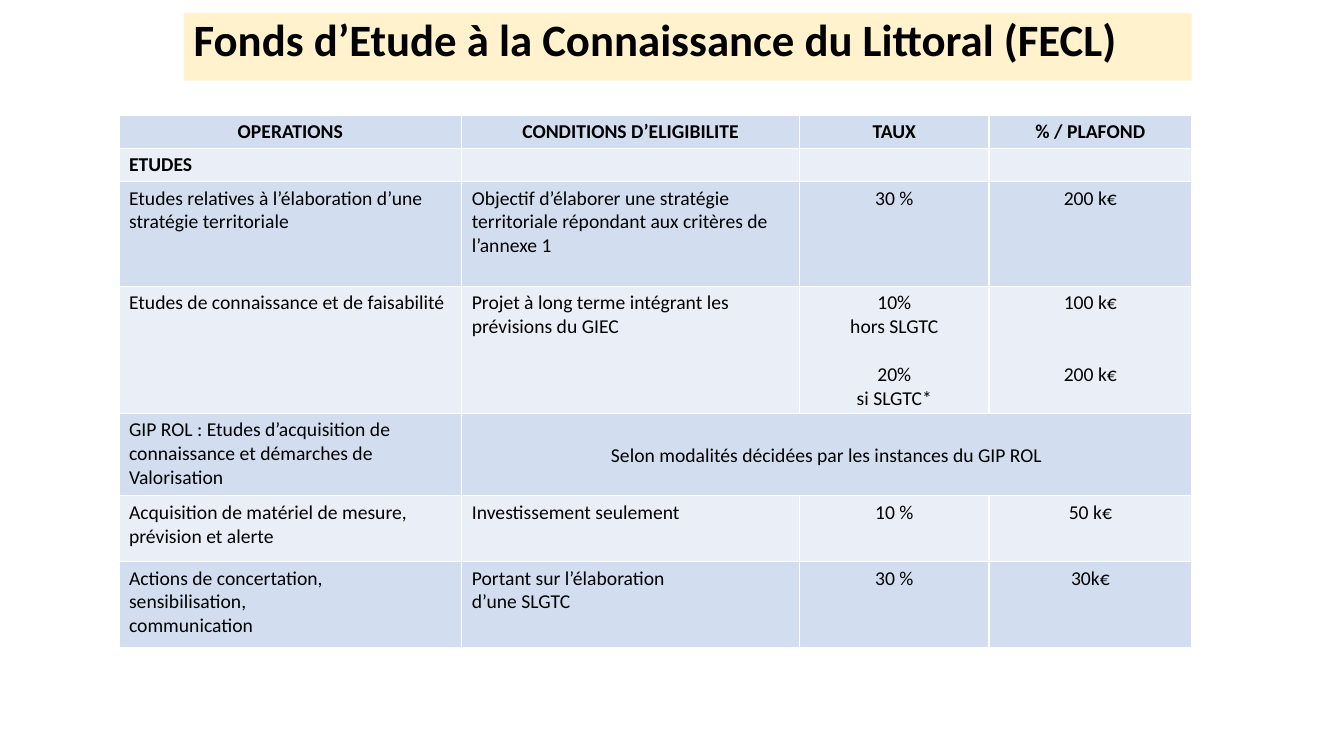
from lxml import etree
from pptx import Presentation
from pptx.dml.color import RGBColor
from pptx.enum import text as tx
from pptx.oxml import ns
from pptx.util import Inches, Pt

HUES = {"cream": "FFF2CC", "blue": "D2DEEF", "pale": "EAEFF7", "white": "FFFFFF", "black": "000000"}
LEFT, MID = tx.PP_ALIGN.LEFT, tx.PP_ALIGN.CENTER


def write(frame, lines, size=14, bold=False, align=LEFT, gap=0, lead=1.0):
    frame.word_wrap = True
    for n, line in enumerate(lines.split("\n")):
        para = frame.add_paragraph() if n else frame.paragraphs[0]
        para.alignment = align
        para.line_spacing = lead
        run = para.add_run()
        run.text = line
        run.font.name = "Calibri"
        run.font.size = Pt(size)
        run.font.bold = bold
        run.font.color.rgb = RGBColor.from_string(HUES["black"])
        if line in ("20%", "200 k€"):
            para.space_before = Pt(gap)


def edge(cell):
    props = cell._tc.get_or_add_tcPr()
    for n, side in enumerate(("lnL", "lnR", "lnT", "lnB")):
        line = etree.Element(ns.qn("a:" + side), w=str(Pt(1)))
        fill = etree.SubElement(line, ns.qn("a:solidFill"))
        etree.SubElement(fill, ns.qn("a:srgbClr"), val=HUES["white"])
        props.insert(n, line)


deck = Presentation()
deck.slide_width, deck.slide_height = Inches(13.33), Inches(7.5)
slide = deck.slides.add_slide(deck.slide_layouts[5])

title = slide.shapes.title
title.left, title.top = Inches(1.82), Inches(0.13)
title.width, title.height = Inches(10), Inches(0.67)
title.fill.solid()
title.fill.fore_color.rgb = RGBColor.from_string(HUES["cream"])
title.text_frame.auto_size = tx.MSO_AUTO_SIZE.NONE
title.text_frame.vertical_anchor = tx.MSO_ANCHOR.TOP
write(title.text_frame, "Fonds d’Etude à la Connaissance du Littoral (FECL)", size=32, bold=True, lead=0.9)

rows = [
    ("OPERATIONS", "CONDITIONS D’ELIGIBILITE", "TAUX", "% / PLAFOND"),
    ("ETUDES", "", "", ""),
    ("Etudes relatives à l’élaboration d’une\nstratégie territoriale",
     "Objectif d’élaborer une stratégie territoriale répondant aux critères de l’annexe 1",
     "30 %", "200 k€"),
    ("Etudes de connaissance et de faisabilité",
     "Projet à long terme intégrant les prévisions du GIEC",
     "10%\nhors SLGTC\n20%\nsi SLGTC*", "100 k€\n200 k€"),
    ("GIP ROL : Etudes d’acquisition de\nconnaissance et démarches de Valorisation",
     "Selon modalités décidées par les instances du GIP ROL", "", ""),
    ("Acquisition de matériel de mesure, prévision et alerte",
     "Investissement seulement", "10 %", "50 k€"),
    ("Actions de concertation,\nsensibilisation,\ncommunication",
     "Portant sur l’élaboration\nd’une SLGTC", "30 %", "30k€"),
]
wides = [3.4, 3.35, 1.88, 2.01]
highs = [0.33, 0.33, 1.04, 1.26, 0.82, 0.65, 0.86]
HEAD, STUDY, GROUP = 0, 3, 4

grid = slide.shapes.add_table(
    len(rows), len(wides), Inches(1.18), Inches(1.14), Inches(sum(wides)), Inches(sum(highs))
).table
grid.horz_banding = False
grid.first_row = False
for col, wide in zip(grid.columns, wides):
    col.width = Inches(wide)
for row, high in zip(grid.rows, highs):
    row.height = Inches(high)
grid.cell(GROUP, 1).merge(grid.cell(GROUP, 3))

for r, row in enumerate(rows):
    for c, words in enumerate(row):
        cell = grid.cell(r, c)
        cell.margin_top, cell.margin_bottom = Inches(0.05), Inches(0.02)
        cell.fill.solid()
        cell.fill.fore_color.rgb = RGBColor.from_string(HUES["pale" if r % 2 else "blue"])
        edge(cell)
        if words:
            mid = r == HEAD or c > 1 or (r, c) == (GROUP, 1)
            gap = 17 * (c - 1) if r == STUDY else 0
            write(cell.text_frame, words, bold=r < 2, align=MID if mid else LEFT, gap=gap)
        else:
            cell.text_frame.paragraphs[0].font.size = Pt(14)
grid.cell(GROUP, 1).vertical_anchor = tx.MSO_ANCHOR.MIDDLE

deck.save("out.pptx")
